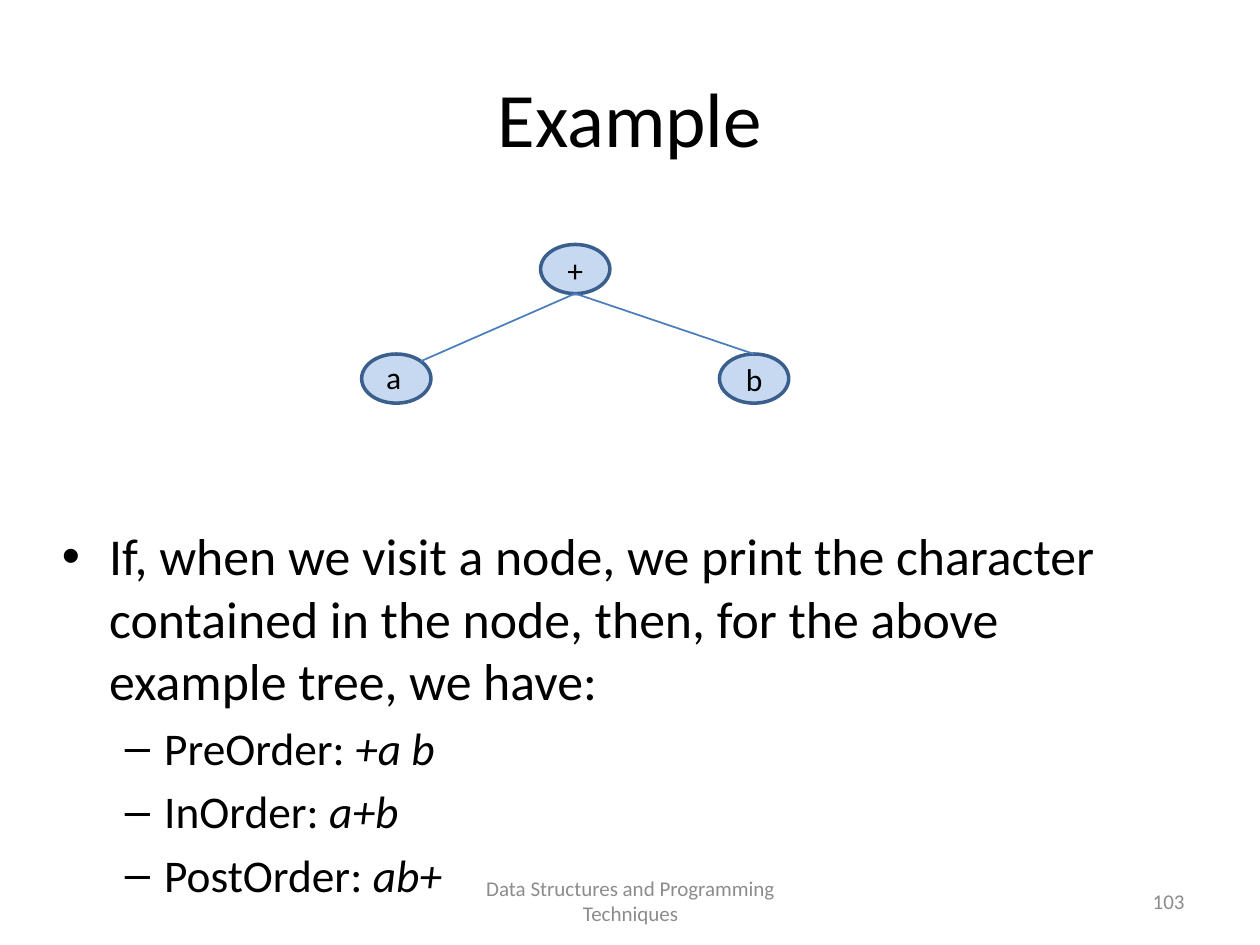
from math import sqrt

from lxml import etree
from pptx import Presentation
from pptx import util as u
from pptx.dml.color import RGBColor
from pptx.enum import shapes, text
from pptx.oxml import ns

BLACK = RGBColor(0x00, 0x00, 0x00)
GRAY = RGBColor(0x8C, 0x8C, 0x8C)
NODE_FILL = RGBColor(0xC6, 0xD9, 0xF1)
NODE_LINE = RGBColor(0x3A, 0x5F, 0x8C)
EDGE = RGBColor(0x4B, 0x7E, 0xBC)
COLUMNS, ROWS = 100, 75
NODE_WIDTH, NODE_HEIGHT = 5.5, 3.9


def add_text(paragraph, content, size=18, color=BLACK, italic=False, font="Calibri"):
    run = paragraph.add_run()
    run.text = content
    run.font.size = u.Pt(size)
    run.font.name = font
    run.font.italic = italic
    run.font.color.rgb = color


class TreeSlide:
    """Holds the current slide and its style, placed on a 100 by 75 grid."""

    def __init__(self, presentation):
        self.cell_width = presentation.slide_width / COLUMNS
        self.cell_height = presentation.slide_height / ROWS
        self.slide = presentation.slides.add_slide(presentation.slide_layouts[1])
        self.shapes = self.slide.shapes

    def place(self, *lengths):
        units = (self.cell_width, self.cell_height) * 2
        return [u.Emu(round(length * unit)) for length, unit in zip(lengths, units)]

    def move(self, shape, *box):
        shape.left, shape.top, shape.width, shape.height = self.place(*box)

    def title(self, content, *box):
        self.move(self.shapes.title, *box)
        paragraph = self.shapes.title.text_frame.paragraphs[0]
        paragraph.alignment = text.PP_ALIGN.CENTER
        add_text(paragraph, content, size=44)

    def body(self, lead, items, *box):
        placeholder = self.slide.placeholders[1]
        self.move(placeholder, *box)
        frame = placeholder.text_frame
        frame.auto_size = text.MSO_AUTO_SIZE.NONE
        add_text(frame.paragraphs[0], lead, size=29.6)
        for name, order in items:
            paragraph = frame.add_paragraph()
            paragraph.level = 1
            add_text(paragraph, name, size=25.9)
            add_text(paragraph, order, size=25.9, italic=True)

    def node(self, left, top):
        box = self.place(left, top, NODE_WIDTH, NODE_HEIGHT)
        shape = self.shapes.add_shape(shapes.MSO_SHAPE.OVAL, *box)
        shape.shadow.inherit = False
        shape.fill.solid()
        shape.fill.fore_color.rgb = NODE_FILL
        shape.line.color.rgb = NODE_LINE
        shape.line.width = u.Pt(2)

    def edge(self, start, end):
        points = self.place(*start, *end)
        connector = self.shapes.add_connector(shapes.MSO_CONNECTOR.STRAIGHT, *points)
        connector.line.color.rgb = EDGE
        connector.line.width = u.Pt(1)
        etree.SubElement(connector._element.spPr, ns.qn("a:effectLst"))

    def label(self, content, *box, align=text.PP_ALIGN.CENTER,
              anchor=text.MSO_ANCHOR.TOP, **style):
        frame = self.shapes.add_textbox(*self.place(*box)).text_frame
        frame.word_wrap = True
        frame.vertical_anchor = anchor
        frame.paragraphs[0].alignment = align
        add_text(frame.paragraphs[0], content, **style)


def main():
    presentation = Presentation()
    presentation.slide_width, presentation.slide_height = u.Inches(10), u.Inches(7.5)
    tree = TreeSlide(presentation)
    tree.title("Example", 5, 3, 90, 12.5)
    orders = [("PreOrder: ", "+a b"), ("InOrder: ", "a+b"), ("PostOrder: ", "ab+")]
    tree.body("If, when we visit a node, we print the character contained in the node, "
              "then, for the above example tree, we have:", orders, 3.9, 41.1, 90, 31)

    root, left_child, right_child = (42.9, 19.4), (28.7, 28.1), (57.1, 28.1)
    for position in (root, left_child, right_child):
        tree.node(*position)
    half_width, half_height = NODE_WIDTH / 2, NODE_HEIGHT / 2
    root_bottom = (root[0] + half_width, root[1] + NODE_HEIGHT)
    left_corner = (left_child[0] + half_width * (1 + sqrt(0.5)),
                   left_child[1] + half_height * (1 - sqrt(0.5)))
    right_top = (right_child[0] + half_width, right_child[1])
    for end in (left_corner, right_top):
        tree.edge(root_bottom, end)
    for content, left, top in (("+", 43.4, 19.4), ("a", 29, 27.9), ("b", 57.6, 28.1)):
        tree.label(content, left, top, 4.5, 4)

    footer = {"size": 12, "color": GRAY, "anchor": text.MSO_ANCHOR.MIDDLE}
    tree.label("Data Structures and Programming Techniques", 34.2, 69.5, 31.7, 4, **footer)
    tree.label("103", 71.7, 69.5, 23.3, 4, align=text.PP_ALIGN.RIGHT, **footer)
    presentation.save("out.pptx")


if __name__ == "__main__":
    main()
